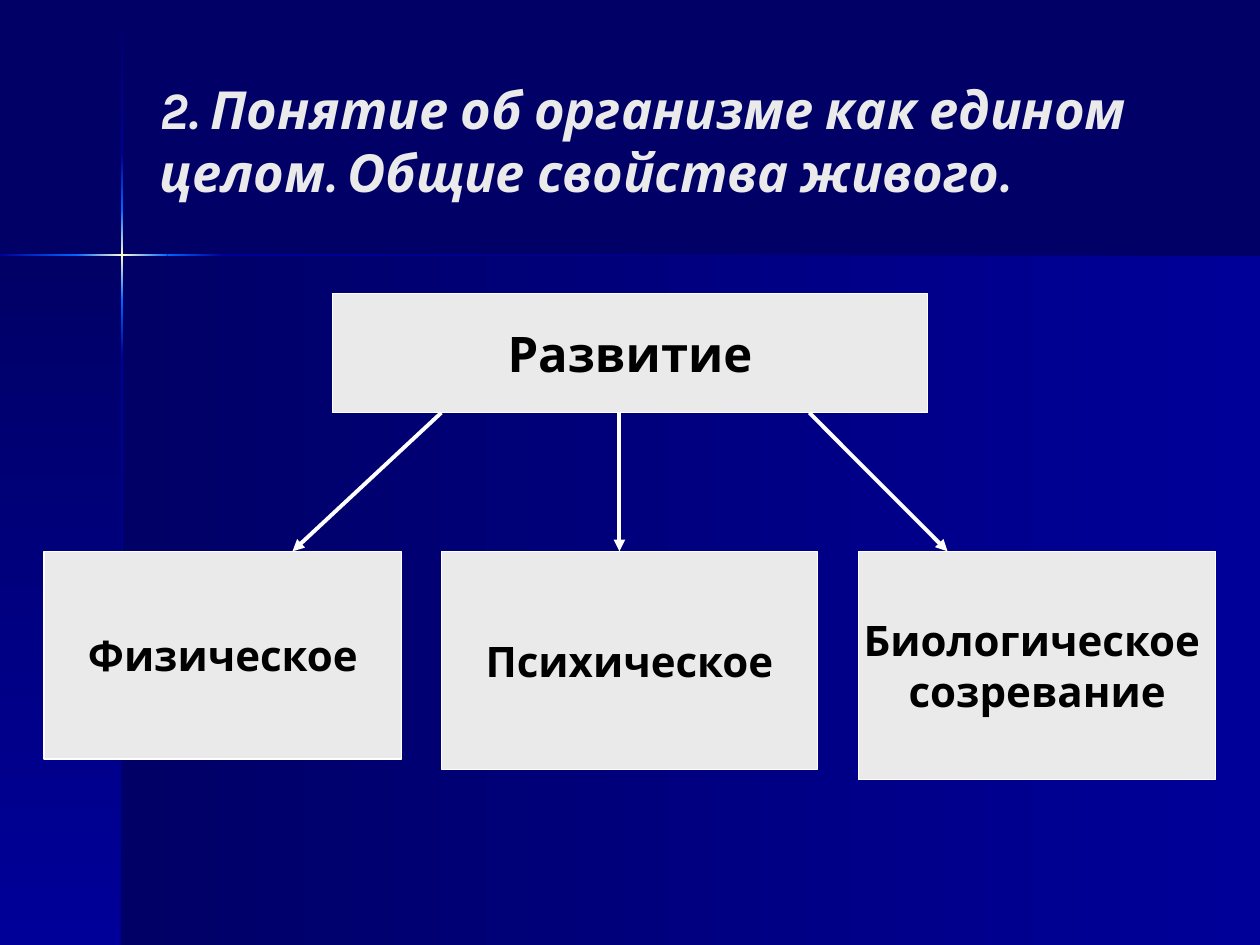
from copy import deepcopy

from pptx import Presentation
from pptx.dml.color import RGBColor
from pptx.enum.shapes import MSO_CONNECTOR, MSO_SHAPE
from pptx.enum.text import MSO_ANCHOR, PP_ALIGN
from pptx.oxml.ns import qn
from pptx.util import Inches, Pt

RECTANGLE = MSO_SHAPE.RECTANGLE
STRAIGHT = MSO_CONNECTOR.STRAIGHT
MIDDLE = MSO_ANCHOR.MIDDLE
LEFT, CENTER = PP_ALIGN.LEFT, PP_ALIGN.CENTER

WIDTH, HEIGHT = 10, 7.5
FONT = "Karla"
NAVY, BLUE, GLOW, SPARK = "000066", "000099", "0066FF", "FFFFCC"
PALE, WHITE, BLACK = "EAEAEA", "FFFFFF", "000000"
BEAM_COLORS = [(NAVY, BLUE), (BLUE, GLOW), (GLOW, SPARK, GLOW), (GLOW, BLUE), (BLUE, NAVY)]
BEAM_WIDTH = 0.02


def color(value):
    return RGBColor.from_string(value)


def lengths(box):
    return [Inches(value) for value in box]


def add_rectangle(slide, box):
    shape = slide.shapes.add_shape(RECTANGLE, *lengths(box))
    shape.shadow.inherit = False
    return shape


def add_gradient(slide, box, colors, angle):
    shape = add_rectangle(slide, box)
    shape.line.fill.background()
    shape.fill.gradient()
    shape.fill.gradient_angle = -angle % 360
    stop_list = shape._element.spPr.find(".//" + qn("a:gsLst"))
    for _ in colors[2:]:
        stop_list.append(deepcopy(stop_list[0]))
    for index, (stop, value) in enumerate(zip(shape.fill.gradient_stops, colors)):
        stop.position = index / (len(colors) - 1)
        stop.color.rgb = color(value)


def write_text(shape, lines, alignment, wrap, font_format):
    frame = shape.text_frame
    frame.word_wrap = wrap
    frame.vertical_anchor = MIDDLE
    for index, line in enumerate(lines):
        paragraph = frame.add_paragraph() if index else frame.paragraphs[0]
        paragraph.alignment = alignment
        run = paragraph.add_run()
        run.text = line
        run.font.color.rgb = color(font_format["color"])
        for name, value in font_format.items():
            if name != "color":
                setattr(run.font, name, value)


def add_backdrop(slide, box):
    left, top, width, height = box
    cross_x, cross_y = left + 0.097 * width, top + 0.27 * height
    right, bottom = left + width, top + height
    add_gradient(slide, (cross_x, cross_y, right - cross_x, bottom - cross_y), (NAVY, BLUE), 0)
    add_gradient(slide, (left, cross_y, cross_x - left, bottom - cross_y), (NAVY, BLUE), 90)

    offsets = (-0.8, -0.36, 0.36, 0.8)
    rows = [top] + [cross_y + offset for offset in offsets] + [bottom]
    columns = [left] + [cross_x + offset for offset in offsets[1:]] + [right]
    for start, end, colors in zip(rows, rows[1:], BEAM_COLORS):
        add_gradient(slide, (cross_x - BEAM_WIDTH / 2, start, BEAM_WIDTH, end - start), colors, 90)
    for start, end, colors in zip(columns, columns[1:], BEAM_COLORS[1:]):
        add_gradient(slide, (start, cross_y - BEAM_WIDTH / 2, end - start, BEAM_WIDTH), colors, 0)


def add_title(slide, box, text):
    shape = slide.shapes.add_textbox(*lengths(box))
    font_format = {"name": FONT, "size": Pt(30), "bold": True, "italic": True, "color": PALE}
    write_text(shape, [text], LEFT, True, font_format)


def add_node(slide, box, lines, size):
    shape = add_rectangle(slide, box)
    shape.fill.solid()
    shape.fill.fore_color.rgb = color(PALE)
    shape.line.color.rgb = color(WHITE)
    shape.line.width = Pt(0.75)
    font_format = {"name": FONT, "size": Pt(size), "bold": True, "color": BLACK}
    write_text(shape, lines, CENTER, False, font_format)


def add_arrow(slide, start, end):
    connector = slide.shapes.add_connector(STRAIGHT, *lengths(start + end))
    connector.line.color.rgb = color(WHITE)
    connector.line.width = Pt(2.25)
    line = connector.line._get_or_add_ln()
    line.append(line.makeelement(qn("a:tailEnd"), {"type": "triangle"}))
    properties = connector._element.spPr
    properties.append(properties.makeelement(qn("a:effectLst"), {}))


def add_tree(slide, box, root, branches):
    left, top, width, height = box
    root_height = 0.245 * height
    branch_top = top + 0.53 * height
    add_node(slide, (left + 0.246 * width, top, 0.508 * width, root_height), [root], 28)
    for lines, offset, share, depth, arrow_start, arrow_end in branches:
        node = (left + offset * width, branch_top, share * width, depth * height)
        add_node(slide, node, lines, 24)
        add_arrow(
            slide,
            (left + arrow_start * width, top + root_height),
            (left + arrow_end * width, branch_top),
        )


def main():
    presentation = Presentation()
    presentation.slide_width, presentation.slide_height = Inches(WIDTH), Inches(HEIGHT)
    slide = presentation.slides.add_slide(presentation.slide_layouts[6])
    slide.background.fill.solid()
    slide.background.fill.fore_color.rgb = color(NAVY)

    add_backdrop(slide, (0, 0, WIDTH, HEIGHT))
    add_title(
        slide,
        (1.17, 0.33, 8.25, 1.57),
        "2. Понятие об организме как едином целом. Общие свойства живого.",
    )
    branches = [
        (["Физическое"], 0, 0.305, 0.427, 0.339, 0.212),
        (["Психическое"], 0.339, 0.321, 0.448, 0.491, 0.491),
        (["Биологическое ", "созревание"], 0.695, 0.305, 0.469, 0.653, 0.771),
    ]
    add_tree(slide, (0.35, 2.33, 9.3, 3.86), "Развитие", branches)
    presentation.save("out.pptx")


if __name__ == "__main__":
    main()
